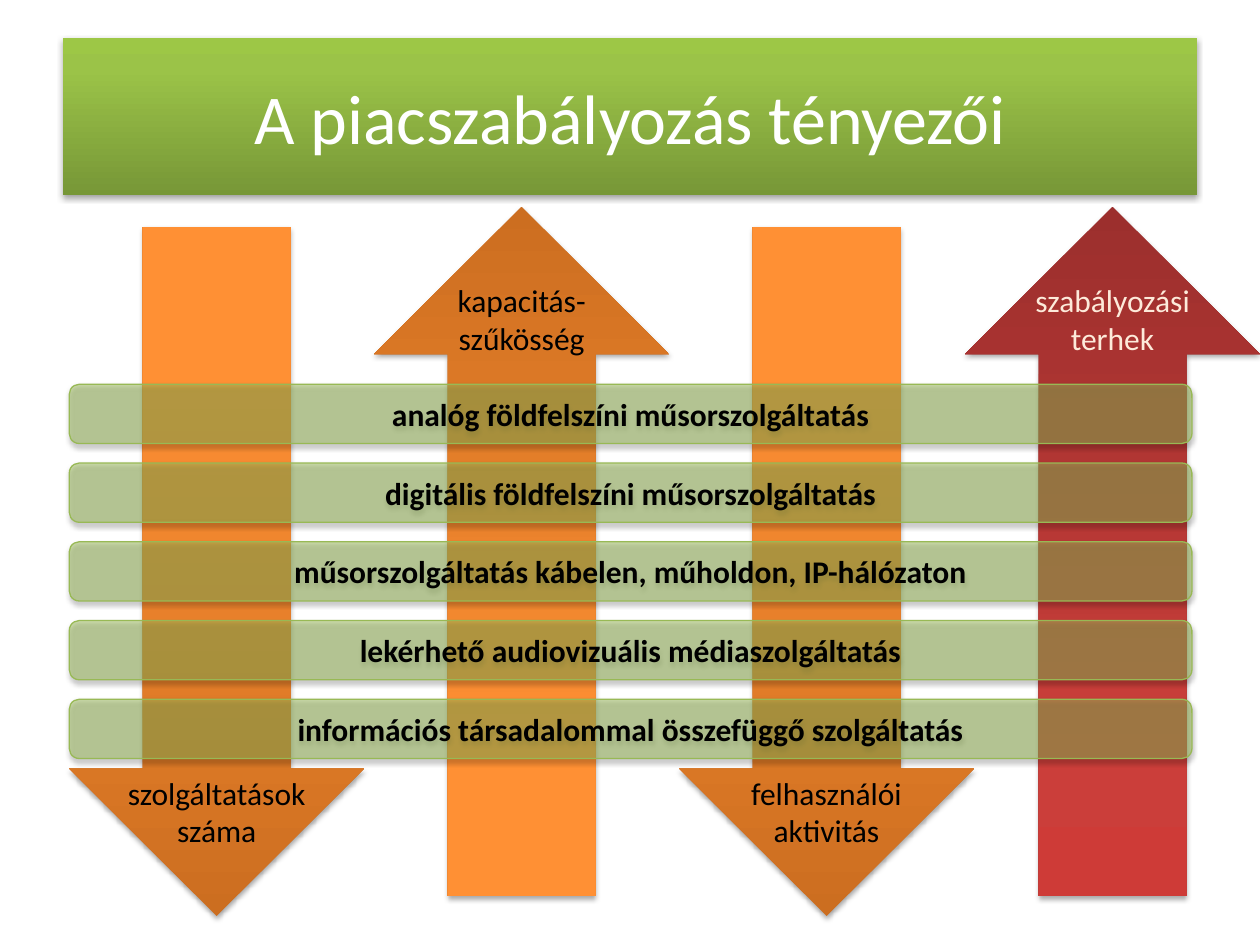
from lxml.etree import SubElement
from pptx import Presentation
from pptx.dml.color import RGBColor
from pptx.enum.shapes import MSO_SHAPE as Shape
from pptx.enum.text import MSO_ANCHOR as Anchor, PP_ALIGN as Align
from pptx.oxml.ns import qn
from pptx.util import Inches, Pt

WIDTH, HEIGHT = 10, 7.5
ORANGE = ("CC6E20", "FF9034", "FF9136")
RED = ("9C2F2D", "CB3E3A", "CE3B37")
GREEN = ("779737", "9BC348", "9DC746")

# Left edge, points up, gradient, label, label colour
FACTORS = [
    (0.55, False, ORANGE, "szolgáltatások száma", "000000"),
    (2.97, True, ORANGE, "kapacitás-szűkösség", "000000"),
    (5.39, False, ORANGE, "felhasználói aktivitás", "000000"),
    (7.66, True, RED, "szabályozási terhek", "FDEADA"),
]
SERVICES = [
    "analóg földfelszíni műsorszolgáltatás",
    "digitális földfelszíni műsorszolgáltatás",
    "műsorszolgáltatás kábelen, műholdon, IP-hálózaton",
    "lekérhető audiovizuális médiaszolgáltatás",
    "információs társadalommal összefüggő szolgáltatás",
]


def color(hex_value):
    return RGBColor.from_string(hex_value)


def place(shape, box):
    shape.left, shape.top, shape.width, shape.height = map(Inches, box)


def fill_gradient(shape, colors):
    """Three stops running from the bottom edge upwards."""
    shape.fill.gradient()
    shape.fill.gradient_angle = 90
    stops = shape._element.spPr.find(qn("a:gradFill")).find(qn("a:gsLst"))
    for old_stop in list(stops):
        stops.remove(old_stop)
    for share, hex_value in zip((0, 80, 100), colors):
        stop = SubElement(stops, qn("a:gs"), pos=str(share * 1000))
        SubElement(stop, qn("a:srgbClr"), val=hex_value)
    shape.line.fill.background()


def add_shadow(shape, distance, opacity):
    shape.shadow.inherit = False
    effects = shape._element.spPr.find(qn("a:effectLst"))
    shadow = SubElement(effects, qn("a:outerShdw"), blurRad=str(Pt(3.1)),
                        dist=str(Pt(distance)), dir="5400000", rotWithShape="0")
    black = SubElement(shadow, qn("a:srgbClr"), val="000000")
    SubElement(black, qn("a:alpha"), val=str(opacity * 1000))


def write(shape, text, size, hex_value, bold=False, anchor=Anchor.MIDDLE):
    frame = shape.text_frame
    frame.word_wrap = True
    frame.vertical_anchor = anchor
    paragraph = frame.paragraphs[0]
    paragraph.alignment = Align.CENTER
    run = paragraph.add_run()
    run.text = text
    run.font.name, run.font.size, run.font.bold = "Calibri", Pt(size), bold
    run.font.color.rgb = color(hex_value)


def add_title(slide, box):
    title = slide.shapes.title
    place(title, box)
    fill_gradient(title, GREEN)
    add_shadow(title, 1.8, 35)
    write(title, "A piacszabályozás tényezői", 40, "FFFFFF")


def add_factor(slide, box, points_up, colors, label, label_color):
    left, top, width, height = box
    arrow = slide.shapes.add_shape(Shape.DOWN_ARROW, *map(Inches, box))
    arrow.rotation = 180 if points_up else 0
    fill_gradient(arrow, colors)
    add_shadow(arrow, 1.8, 35)

    # The label sits in the arrowhead
    label_width, label_height = 2.03, 0.71
    label_top = top + (0.54 if points_up else 4.29)
    caption = slide.shapes.add_textbox(
        Inches(left + (width - label_width) / 2), Inches(label_top),
        Inches(label_width), Inches(label_height))
    write(caption, label, 18, label_color, anchor=Anchor.TOP)


def add_services(slide, box):
    left, top, width, height = box
    bar_height = 0.47
    pitch = (height - bar_height) / (len(SERVICES) - 1)
    for row, service in enumerate(SERVICES):
        bar = slide.shapes.add_shape(
            Shape.ROUNDED_RECTANGLE, Inches(left), Inches(top + row * pitch),
            Inches(width), Inches(bar_height))
        bar.fill.solid()
        bar.fill.fore_color.rgb = color("9BBB59")
        tint = bar._element.spPr.find(qn("a:solidFill"))[0]
        SubElement(tint, qn("a:alpha"), val="50000")
        bar.line.color.rgb = color("98B955")
        bar.line.width = Pt(0.75)
        add_shadow(bar, 1.6, 38)
        write(bar, service, 18, "000000", bold=True)


def main():
    deck = Presentation()
    deck.slide_width, deck.slide_height = Inches(WIDTH), Inches(HEIGHT)
    slide = deck.slides.add_slide(deck.slide_layouts[5])

    add_title(slide, (0.05 * WIDTH, 0.04 * HEIGHT, 0.9 * WIDTH, 1.25))
    for left, points_up, colors, label, label_color in FACTORS:
        box = (left, 1.64 if points_up else 1.8, 2.34, 5.47)
        add_factor(slide, box, points_up, colors, label, label_color)
    add_services(slide, (0.55, 3.05, 8.91, 2.97))

    deck.save("out.pptx")


if __name__ == "__main__":
    main()
